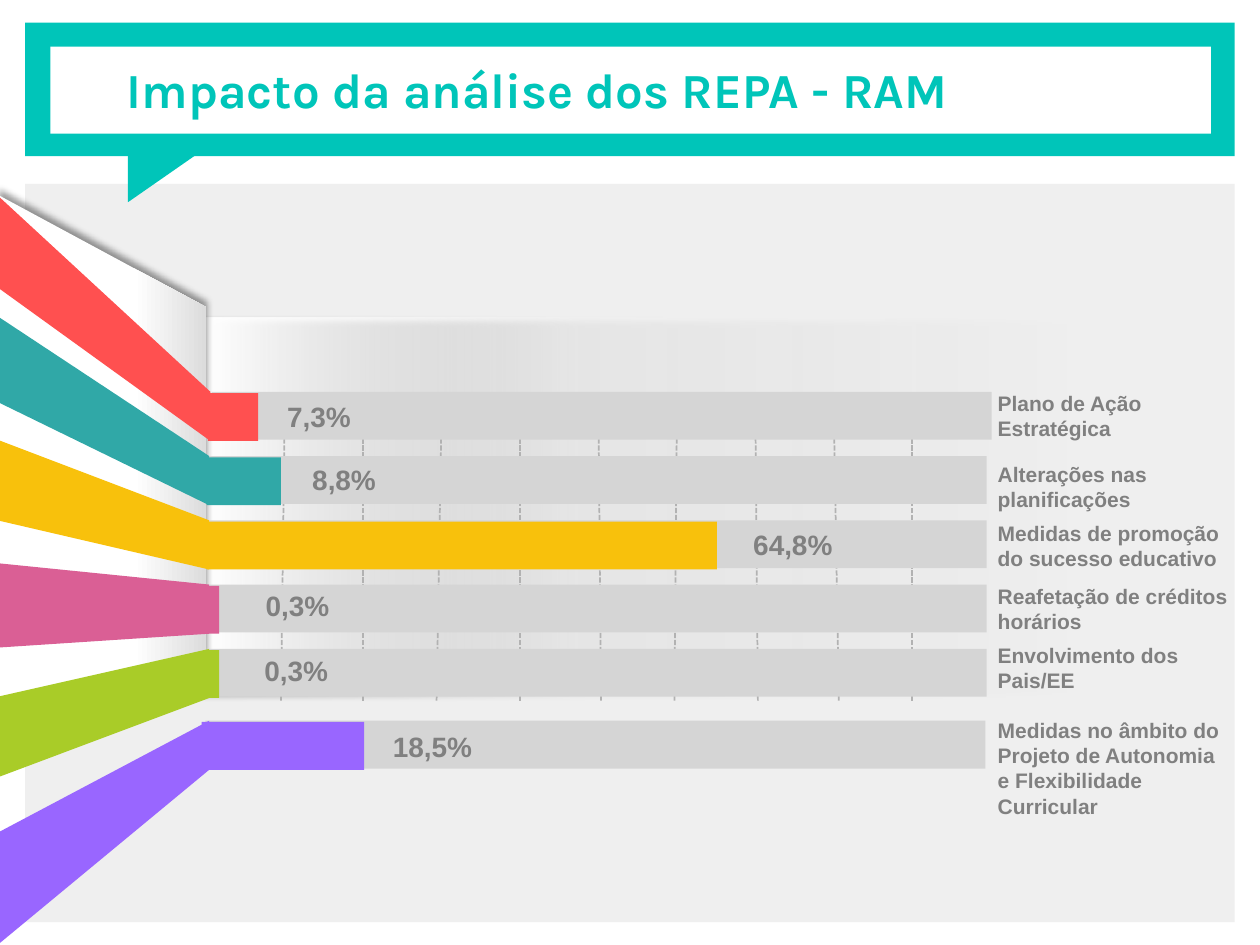
import collections

import pptx
import pptx.dml.color
import pptx.enum.dml
import pptx.enum.shapes
import pptx.enum.text
import pptx.oxml
import pptx.util
from lxml import etree
from pptx.util import Inches

Theme = collections.namedtuple(
    "Theme", "accent panel track grid text white heading_font body_font title value label")
theme = Theme(accent="00C5B9", panel="EFEFEF", track="D5D5D5", grid="B2B2B2", text="808080",
              white="FFFFFF", heading_font="Karla", body_font="Arial", title=28, value=16, label=12)
RECTANGLE = pptx.enum.shapes.MSO_SHAPE.RECTANGLE
MIDDLE = pptx.enum.text.MSO_ANCHOR.MIDDLE
TOP = pptx.enum.text.MSO_ANCHOR.TOP
NAMESPACE = 'xmlns:a="http://schemas.openxmlformats.org/drawingml/2006/main"'

presentation = pptx.Presentation()
presentation.slide_width, presentation.slide_height = Inches(10), Inches(7.5)
slide = presentation.slides.add_slide(presentation.slide_layouts[6])


def add_figure(color, box=None, preset=RECTANGLE, points=None):
    """Add a borderless preset shape in box, or a polygon through points, in inches."""
    if points:
        corners = [(Inches(x), Inches(y)) for x, y in points]
        builder = slide.shapes.build_freeform(*corners[0])
        builder.add_line_segments(corners[1:], close=True)
        shape = builder.convert_to_shape()
    else:
        shape = slide.shapes.add_shape(preset, *map(Inches, box))
    shape.shadow.inherit = False
    shape.fill.solid()
    shape.fill.fore_color.rgb = pptx.dml.color.RGBColor.from_string(color)
    shape.line.fill.background()
    return shape


def add_text(text, box, size, color=theme.text, font=theme.body_font, anchor=MIDDLE, wrap=True):
    frame = slide.shapes.add_textbox(*map(Inches, box)).text_frame
    frame.word_wrap = wrap
    frame.vertical_anchor = anchor
    run = frame.paragraphs[0].add_run()
    run.text = text
    run.font.name, run.font.size, run.font.bold = font, pptx.util.Pt(size), True
    run.font.color.rgb = pptx.dml.color.RGBColor.from_string(color)


# Background and title banner
add_figure(theme.panel, (0.2, 1.46, 9.6, 5.86))
add_figure(theme.accent, (0.2, 0.18, 9.6, 1.06))
pointer = add_figure(theme.accent, (1.12, 1.02, 0.48, 0.69),
                     pptx.enum.shapes.MSO_SHAPE.RIGHT_TRIANGLE)
pointer.rotation = 90
add_figure(theme.white, (0.4, 0.37, 9.21, 0.69))
add_text("Impacto da análise dos REPA - RAM", (0.91, 0.18, 8.7, 1.06), theme.title,
         color=theme.accent, font=theme.heading_font)

# Back wall and side wall: (shape, gradient stops as position/colour/opacity, shadow direction)
back_wall = add_figure(theme.white, (1.63, 2.52, 7.06, 2.97))
side_wall = add_figure(theme.white,
                       points=[(1.64, 5.22), (-0.01, 6.11), (-0.01, 1.55), (1.64, 2.44)])
walls = [
    (back_wall, [(0, theme.white, 100), (42, theme.white, 13), (100, theme.white, 0)], 135),
    (side_wall, [(0, theme.white, 100), (65, theme.white, 100), (100, "DCDCDC", 100)], 270),
]
for wall, stops, direction in walls:
    stop_xml = "".join(
        f'<a:gs pos="{position * 1000}"><a:srgbClr val="{color}">'
        f'<a:alpha val="{opacity * 1000}"/></a:srgbClr></a:gs>'
        for position, color, opacity in stops)
    gradient = pptx.oxml.parse_xml(
        f'<a:gradFill {NAMESPACE} rotWithShape="1"><a:gsLst>{stop_xml}</a:gsLst>'
        '<a:lin ang="0" scaled="0"/></a:gradFill>')
    shadow = pptx.oxml.parse_xml(
        f'<a:outerShdw {NAMESPACE} blurRad="50800" dist="38100" dir="{direction * 60000}" '
        'rotWithShape="0"><a:srgbClr val="000000"><a:alpha val="40000"/></a:srgbClr>'
        '</a:outerShdw>')
    properties = wall._element.spPr
    properties.replace(properties.find(pptx.oxml.ns.qn("a:solidFill")), gradient)
    properties.find(pptx.oxml.ns.qn("a:effectLst")).append(shadow)

# Dashed grid lines, each leaning slightly from top to bottom
grid_leans = [-0.03, 0, -0.04, 0, 0.02, -0.02, 0.02, 0.04, 0]
for index, lean in enumerate(grid_leans):
    x = 2.26 + 0.6225 * index
    line = slide.shapes.add_connector(pptx.enum.shapes.MSO_CONNECTOR.STRAIGHT,
                                      Inches(x), Inches(3.26), Inches(x + lean), Inches(5.56))
    line.line.color.rgb = pptx.dml.color.RGBColor.from_string(theme.grid)
    line.line.width = pptx.util.Pt(1)
    line.line.dash_style = pptx.enum.dml.MSO_LINE.SQUARE_DOT
    etree.SubElement(line._element.spPr, pptx.oxml.ns.qn("a:effectLst"))

# Bars: each has a ribbon that widens to the slide's left edge
Bar = collections.namedtuple(
    "Bar", "color top track_left left width ribbon_top ribbon_bottom value value_at label label_box")
bars = [
    Bar("FF5050", 3.11, 1.68, 1.65, 0.4, 1.55, 2.28, "7,3%", (2.18, 3.12),
        "Plano de Ação Estratégica", (7.82, 3.05, 2.09, 0.5)),
    Bar("30A8A7", 3.62, 1.64, 1.64, 0.59, 2.51, 3.19, "8,8%", (2.38, 3.62),
        "Alterações nas planificações", (7.82, 3.61, 2.14, 0.5)),
    Bar("F8C10C", 4.13, 1.64, 1.64, 4.05, 3.49, 4.13, "64,8%", (5.88, 4.14),
        "Medidas de promoção do sucesso educativo", (7.82, 4.08, 2.14, 0.5)),
    Bar("DA5F95", 4.64, 1.64, 1.6, 0.14, 4.47, 5.14, "0,3%", (2.01, 4.62),
        "Reafetação de créditos horários", (7.82, 4.58, 2.09, 0.5)),
    Bar("A9CC28", 5.15, 1.64, 1.64, 0.1, 5.53, 6.17, "0,3%", (2, 5.14),
        "Envolvimento dos Pais/EE", (7.82, 5.05, 2.09, 0.5)),
    Bar("9966FF", 5.72, 1.63, 1.6, 1.29, 6.61, 7.5, "18,5%", (3.02, 5.74),
        "Medidas no âmbito do Projeto de Autonomia e Flexibilidade Curricular",
        (7.82, 5.64, 1.97, 0.91)),
]
bar_height = 0.38
for bar in bars:
    add_figure(theme.track, (bar.track_left, bar.top, 6.19, bar_height))
    add_figure(bar.color, (bar.left, bar.top + 0.01, bar.width, bar_height))
    ribbon_right = max(bar.left, 1.64) + 0.02
    add_figure(bar.color, points=[
        (ribbon_right, bar.top), (-0.02, bar.ribbon_top), (-0.02, bar.ribbon_bottom),
        (ribbon_right, bar.top + bar_height + 0.01)])
    add_text(bar.value, (*bar.value_at, 0.84, 0.37), theme.value, anchor=TOP, wrap=False)
    add_text(bar.label, bar.label_box, theme.label)

presentation.save("out.pptx")
